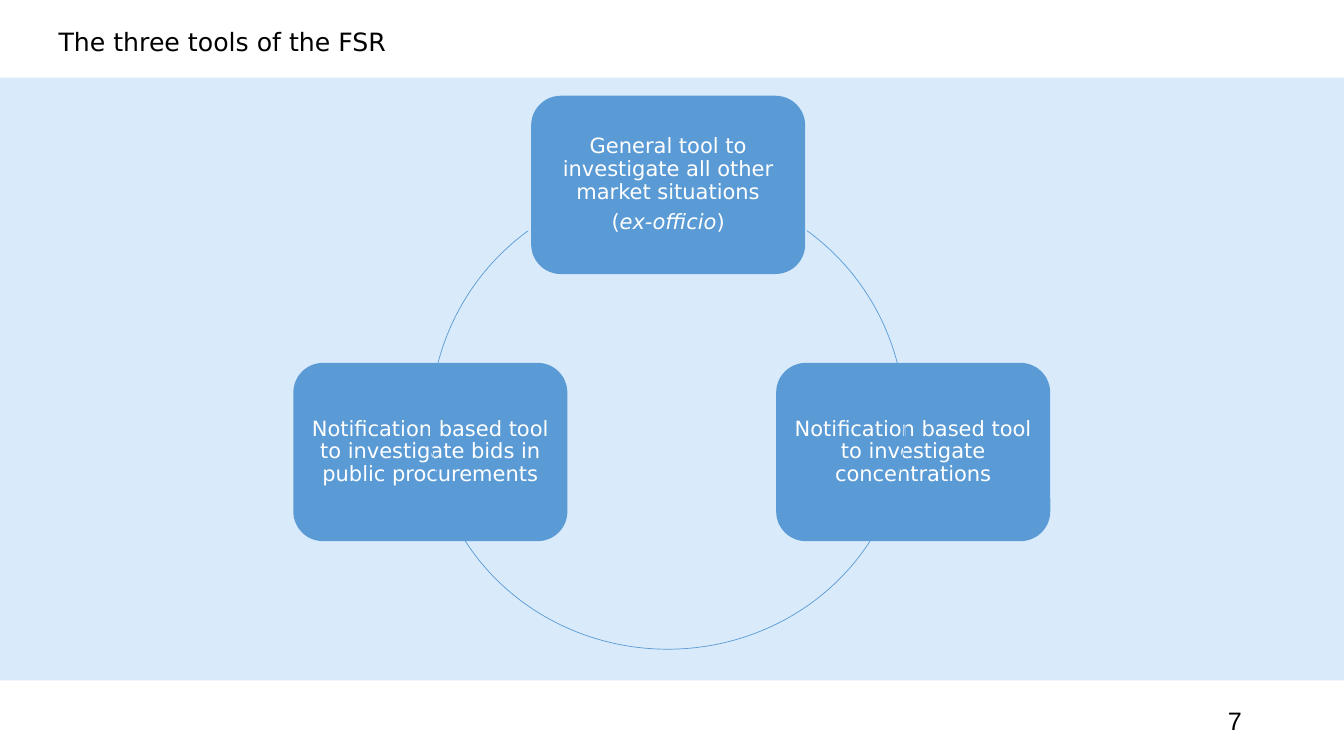
from pptx import Presentation
from pptx.dml.color import RGBColor
from pptx.enum.shapes import MSO_SHAPE
from pptx.enum.text import MSO_ANCHOR, MSO_AUTO_SIZE, PP_ALIGN
from pptx.util import Pt

BLUE, PALE, WHITE, BLACK = "5B9BD5", "D9EAFB", "FFFFFF", "000000"
FONT = "DejaVu Sans"
BOX_W, BOX_H = 195.8, 127.4
RING_LEFT, RING_TOP, RING_SIZE = 307.4, 132.5, 339
TOOLS = [
    (379.4, 68.4, [[("General tool to investigate all other market situations", False)],
                   [("(", False), ("ex-officio", True), (")", False)]]),
    (554.4, 259.2, [[("Notification based tool to investigate concentrations", False)]]),
    (209.5, 259.2, [[("Notification based tool to investigate bids in public procurements", False)]]),
]


def color(hex_string):
    """Turn a hex string into a colour."""
    return RGBColor.from_string(hex_string)


def add_run(p, text, size, font, hex_string, italic=False):
    """Append one formatted run to a paragraph."""
    r = p.add_run()
    r.text = text
    r.font.size = Pt(size)
    r.font.name = font
    r.font.italic = italic
    r.font.color.rgb = color(hex_string)


def add_filled(s, kind, left, top, width, height, fill):
    """Add a borderless filled shape."""
    sp = s.shapes.add_shape(kind, Pt(left), Pt(top), Pt(width), Pt(height))
    sp.shadow.inherit = False
    sp.fill.solid()
    sp.fill.fore_color.rgb = color(fill)
    sp.line.fill.background()
    return sp


def add_tool(s, left, top, paragraphs):
    """Add one rounded tool box with centred text."""
    sp = add_filled(s, MSO_SHAPE.ROUNDED_RECTANGLE, left, top, BOX_W, BOX_H, BLUE)
    tf = sp.text_frame
    tf.word_wrap = True
    tf.vertical_anchor = MSO_ANCHOR.MIDDLE
    tf.margin_left = tf.margin_right = tf.margin_top = tf.margin_bottom = Pt(6)
    for i, runs in enumerate(paragraphs):
        p = tf.add_paragraph() if i else tf.paragraphs[0]
        p.alignment = PP_ALIGN.CENTER
        p.line_spacing = 0.9
        p.space_after = Pt(5.25)
        for text, italic in runs:
            add_run(p, text, 15, FONT, WHITE, italic)


def add_arc(s, start, end, top=RING_TOP, height=RING_SIZE):
    """Add a thin arc of the ring, clockwise between two angles in degrees."""
    sp = s.shapes.add_shape(MSO_SHAPE.ARC, Pt(RING_LEFT), Pt(top), Pt(RING_SIZE), Pt(height))
    sp.shadow.inherit = False
    sp.adjustments[0] = start * 0.6
    sp.adjustments[1] = end * 0.6
    sp.fill.background()
    sp.line.color.rgb = color(BLUE)
    sp.line.width = Pt(0.5)
    return sp


def set_title(s, text):
    """Place and format the title placeholder."""
    sp = s.shapes.title
    sp.left, sp.top, sp.width, sp.height = Pt(34.6), Pt(17.3), Pt(878.4), Pt(31.7)
    tf = sp.text_frame
    tf.auto_size = MSO_AUTO_SIZE.NONE
    tf.vertical_anchor = MSO_ANCHOR.TOP
    p = tf.paragraphs[0]
    p.alignment = PP_ALIGN.LEFT
    p.line_spacing = 0.9
    add_run(p, text, 18, FONT, BLACK)


def add_page_number(s, text):
    """Add the page number at the lower right."""
    sp = s.shapes.add_textbox(Pt(678.2), Pt(500.4), Pt(216), Pt(28.8))
    tf = sp.text_frame
    tf.word_wrap = True
    tf.vertical_anchor = MSO_ANCHOR.MIDDLE
    p = tf.paragraphs[0]
    p.alignment = PP_ALIGN.RIGHT
    add_run(p, text, 18, "Arial", BLACK)


def main():
    """Build and save the slide."""
    prs = Presentation()
    prs.slide_width, prs.slide_height = Pt(960), Pt(540)
    s = prs.slides.add_slide(prs.slide_layouts[5])
    add_filled(s, MSO_SHAPE.RECTANGLE, 0, 55.4, 960, 430.6, PALE)
    set_title(s, "The three tools of the FSR")
    add_page_number(s, "7")
    for left, top, paragraphs in TOOLS:
        add_tool(s, left, top, paragraphs)
    add_arc(s, 306, 6.5)
    add_arc(s, 173.5, 234)
    add_arc(s, 180, 359.5, 140.4, 323.3).rotation = 180
    prs.save("out.pptx")


if __name__ == "__main__":
    main()
